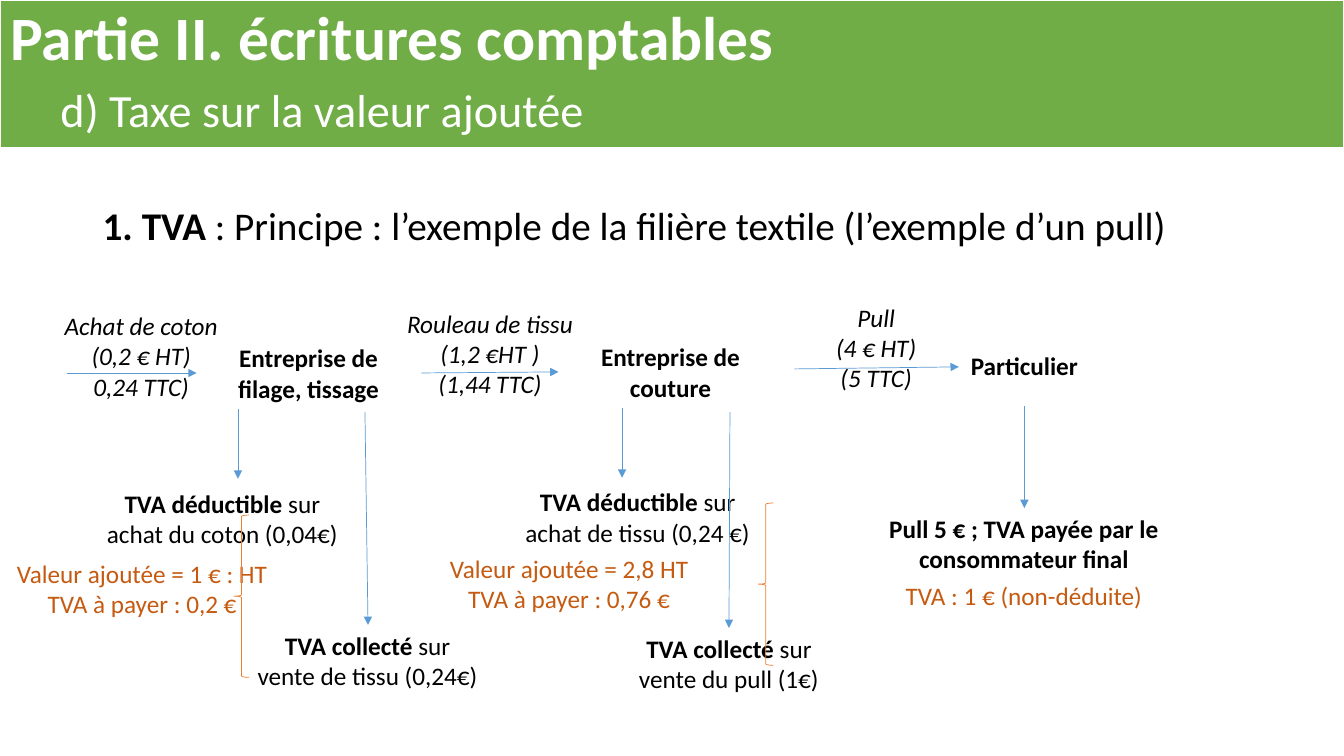
from dataclasses import dataclass

from lxml.etree import SubElement
from pptx import Presentation
from pptx.dml.color import RGBColor
from pptx.enum.shapes import MSO_CONNECTOR, MSO_SHAPE
from pptx.enum.text import MSO_ANCHOR, MSO_AUTO_SIZE, PP_ALIGN
from pptx.oxml.ns import qn
from pptx.util import Inches, Pt

FONT = "Calibri"
COLORS = {
    "banner": "70AD47",
    "white": "FFFFFF",
    "black": "000000",
    "arrow": "5B9BD5",
    "brace": "ED7D31",
    "amount": "C55A11",
}
LINE_HEIGHT = 0.305
LABEL_PADDING = 0.1


@dataclass
class Label:
    """One centred text; each paragraph is a bold part and a plain part."""
    left: float
    top: float
    width: float
    lines: int
    paragraphs: list[tuple[str, str]]
    color: str = "black"
    italic: bool = False


@dataclass
class Arrow:
    start: tuple[float, float]
    end: tuple[float, float]


def company(left: float, top: float, name: str, lines: int = 2) -> Label:
    return Label(left, top, 2.22, lines, [(name, "")])


def goods(left: float, top: float, *texts: str) -> Label:
    return Label(left, top, 2.22, 3, [("", text) for text in texts], italic=True)


def tax(left: float, top: float, width: float, kind: str, detail: str) -> Label:
    return Label(left, top, width, 2, [(f"TVA {kind} ", f"sur {detail}")])


def amount(left: float, top: float, width: float, *texts: str) -> Label:
    return Label(left, top, width, len(texts), [("", text) for text in texts], "amount")


LABELS = [
    company(1.95, 3.35, "Entreprise de filage, tissage"),
    company(5.54, 3.34, "Entreprise de couture"),
    company(9.05, 3.43, "Particulier", lines=1),
    goods(0.29, 3.03, "Achat de coton", "(0,2 € HT)", "0,24 TTC)"),
    goods(3.75, 3.01, "Rouleau de tissu", "(1,2 €HT )", "(1,44 TTC)"),
    goods(7.58, 2.95, "Pull", "(4 € HT)", "(5 TTC)"),
    tax(0.84, 4.79, 2.73, "déductible", "achat du coton (0,04€)"),
    tax(2.44, 6.2, 2.41, "collecté", "vente de tissu (0,24€)"),
    tax(4.96, 4.78, 2.73, "déductible", "achat de tissu (0,24 €)"),
    tax(6.11, 6.23, 2.24, "collecté", "vente du pull (1€)"),
    Label(8.16, 5.04, 3.99, 2, [("Pull 5 € ; TVA payée par le consommateur final", "")]),
    amount(0.06, 5.49, 2.7, "Valeur ajoutée = 1 € : HT", "TVA à payer : 0,2 €"),
    amount(4.22, 5.44, 2.85, "Valeur ajoutée = 2,8 HT", "TVA à payer : 0,76 €"),
    amount(8.64, 5.71, 3.03, "TVA : 1 € (non-déduite)"),
]

ARROWS = [
    Arrow((0.66, 3.7), (1.95, 3.7)),
    Arrow((4.18, 3.7), (5.54, 3.69)),
    Arrow((7.88, 3.66), (9.51, 3.64)),
    Arrow((2.36, 4.06), (2.36, 4.75)),
    Arrow((3.62, 4.09), (3.65, 6.2)),
    Arrow((6.17, 4.05), (6.17, 4.74)),
    Arrow((7.24, 4.09), (7.23, 6.23)),
    Arrow((10.16, 4.03), (10.16, 5.04)),
]

BRACES = [(2.32, 5.11), (7.52, 4.99)]


def rgb(name: str) -> RGBColor:
    return RGBColor.from_string(COLORS[name])


def add_span(para, text: str, *, size: float = 18, color: str = "black",
             bold: bool = False, italic: bool = False) -> None:
    span = para.add_run()
    span.text = text
    span.font.name = FONT
    span.font.size = Pt(size)
    span.font.bold = bold
    span.font.italic = italic
    span.font.color.rgb = rgb(color)


def fill_banner(title) -> None:
    title.left, title.top = Inches(0), Inches(0)
    title.width, title.height = Inches(13.33), Inches(1.47)
    title.fill.solid()
    title.fill.fore_color.rgb = rgb("banner")
    title.line.color.rgb = rgb("white")
    title.line.width = Pt(1.5)
    frame = title.text_frame
    frame.word_wrap = True
    frame.auto_size = MSO_AUTO_SIZE.NONE
    frame.vertical_anchor = MSO_ANCHOR.MIDDLE
    para = frame.paragraphs[0]
    para.alignment = PP_ALIGN.LEFT
    para.line_spacing = 0.9
    add_span(para, "Partie II. écritures comptables", size=44, color="white", bold=True)
    para.add_line_break()
    add_span(para, "\t", size=44, color="white", bold=True)
    add_span(para, "d) Taxe sur la valeur ajoutée", size=33, color="white")


def add_heading(page) -> None:
    box = page.shapes.add_textbox(Inches(0.92), Inches(2), Inches(11.5), Inches(4.76))
    box.text_frame.word_wrap = True
    para = box.text_frame.paragraphs[0]
    para.line_spacing = 0.9
    para.space_before = Pt(10)
    add_span(para, "1. TVA ", size=28, bold=True)
    add_span(para, ": Principe : l’exemple de la filière textile (l’exemple d’un pull)", size=28)


def add_label(page, label: Label) -> None:
    height = LABEL_PADDING + LINE_HEIGHT * label.lines
    box = page.shapes.add_textbox(Inches(label.left), Inches(label.top),
                                  Inches(label.width), Inches(height))
    frame = box.text_frame
    frame.word_wrap = True
    frame.auto_size = MSO_AUTO_SIZE.SHAPE_TO_FIT_TEXT
    for index, (strong, plain) in enumerate(label.paragraphs):
        para = frame.add_paragraph() if index else frame.paragraphs[0]
        para.alignment = PP_ALIGN.CENTER
        for text, bold in ((strong, True), (plain, False)):
            if text:
                add_span(para, text, color=label.color, bold=bold, italic=label.italic)


def add_arrow(page, arrow: Arrow) -> None:
    ends = [Inches(value) for value in (*arrow.start, *arrow.end)]
    connector = page.shapes.add_connector(MSO_CONNECTOR.STRAIGHT, *ends)
    connector.line.color.rgb = rgb("arrow")
    connector.line.width = Pt(0.5)
    properties = connector._element.spPr
    SubElement(properties.find(qn("a:ln")), qn("a:tailEnd"), type="triangle")
    SubElement(properties, qn("a:effectLst"))


def add_brace(page, left: float, top: float) -> None:
    brace = page.shapes.add_shape(MSO_SHAPE.LEFT_BRACE, Inches(left), Inches(top),
                                  Inches(0.15), Inches(1.61))
    brace.shadow.inherit = False
    brace.fill.background()
    brace.line.color.rgb = rgb("brace")
    brace.line.width = Pt(0.5)


def main() -> None:
    deck = Presentation()
    deck.slide_width, deck.slide_height = Inches(13.33), Inches(7.5)
    page = deck.slides.add_slide(deck.slide_layouts.get_by_name("Title Only"))
    fill_banner(page.shapes.title)
    add_heading(page)
    for label in LABELS:
        add_label(page, label)
    for arrow in ARROWS:
        add_arrow(page, arrow)
    for left, top in BRACES:
        add_brace(page, left, top)
    deck.save("out.pptx")


if __name__ == "__main__":
    main()
